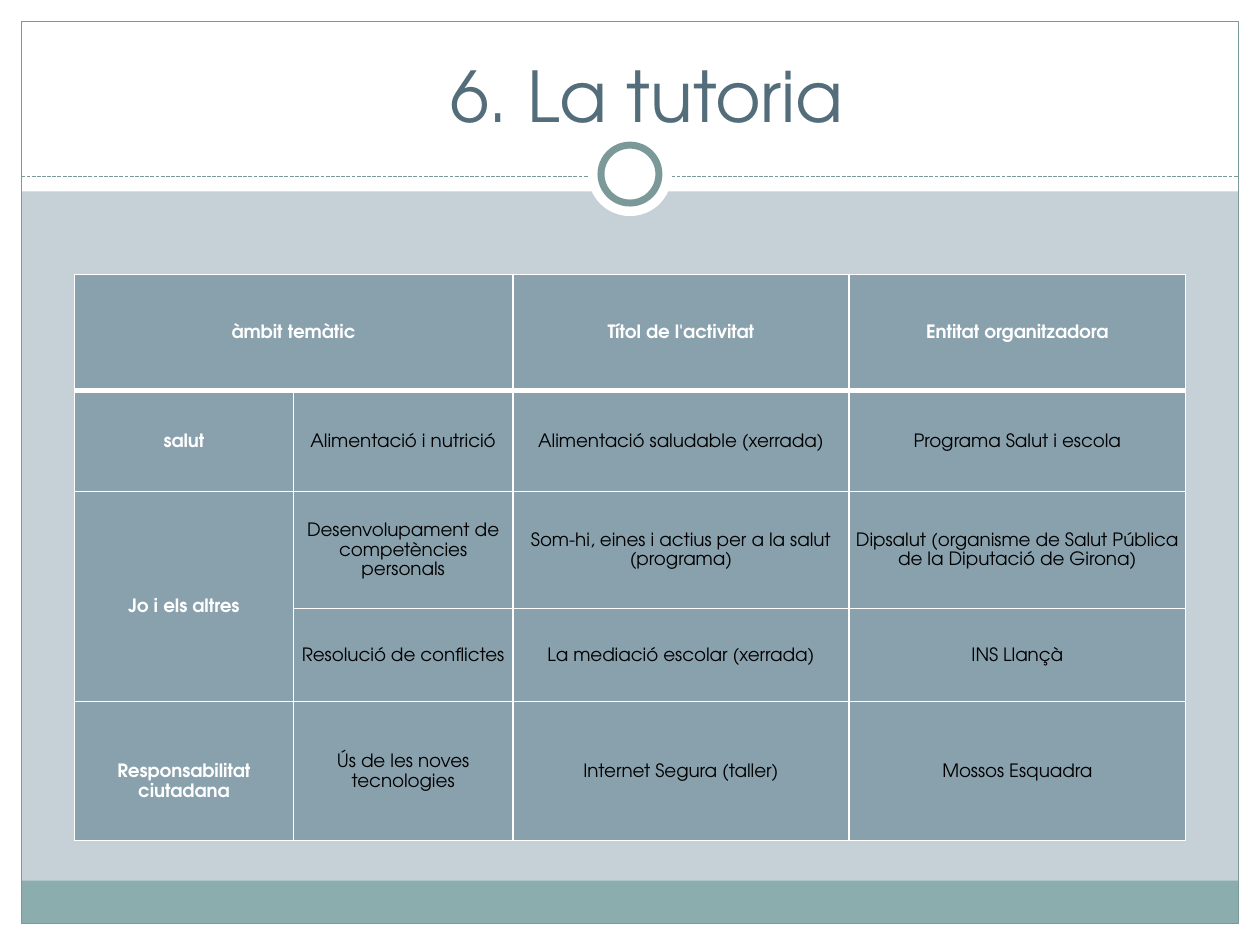
"""Build the tutoring slide with its table of activities."""
from lxml.etree import SubElement
from pptx import Presentation
from pptx.dml.color import RGBColor
from pptx.enum.dml import MSO_LINE
from pptx.enum.shapes import MSO_CONNECTOR, MSO_SHAPE
from pptx.enum.text import MSO_ANCHOR, PP_ALIGN
from pptx.oxml.ns import qn
from pptx.util import Pt

FONT = "TeX Gyre Adventor"
WIDE, HIGH, EDGE = 720, 540, 12.24
LINE = 11.5
HUES = {
    "back": "C5D1D7", "white": "FFFFFF", "band": "8CADAE", "rim": "7C999A",
    "title": "546D7A", "cell": "88A1AD", "black": "000000",
}
COLS = [125.28, 125.28, 192.24, 192.24]
ROWS = [66.24, 57.6, 66.96, 53.28, 79.2]
CELLS = [
    ["àmbit temàtic", "", "Títol de l'activitat", "Entitat organitzadora"],
    ["salut", "Alimentació i nutrició", "Alimentació saludable (xerrada)",
     "Programa Salut i escola"],
    ["Jo i els altres", "Desenvolupament de competències personals",
     "Som-hi, eines i actius per a la salut (programa)",
     "Dipsalut (organisme de Salut Pública de la Diputació de Girona)"],
    ["", "Resolució de conflictes", "La mediació escolar (xerrada)", "INS Llançà"],
    ["Responsabilitat ciutadana", "Ús de les noves tecnologies",
     "Internet Segura (taller)", "Mossos Esquadra"],
]
LOW = {(2, 0), (4, 0)}


def tint(name):
    return RGBColor.from_string(HUES[name])


def add_form(slide, kind, box, fill=None, rim=0):
    form = slide.shapes.add_shape(kind, *map(Pt, box))
    form.shadow.inherit = False
    if fill:
        form.fill.solid()
        form.fill.fore_color.rgb = tint(fill)
    else:
        form.fill.background()
    if rim:
        form.line.color.rgb = tint("rim")
        form.line.width = Pt(rim)
    else:
        form.line.fill.background()


def add_rule(slide, y):
    rule = slide.shapes.add_connector(
        MSO_CONNECTOR.STRAIGHT, Pt(EDGE), Pt(y), Pt(WIDE - EDGE), Pt(y))
    rule.line.color.rgb = tint("rim")
    rule.line.width = Pt(0.75)
    rule.line.dash_style = MSO_LINE.SQUARE_DOT
    SubElement(rule.element.spPr, qn("a:effectLst"))


def add_frame(slide):
    inner = WIDE - 2 * EDGE
    for box, fill in [
        ((0, 527.76, WIDE, EDGE), "white"),
        ((0, 0, WIDE, 109.44), "white"),
        ((0, 0, EDGE, HIGH), "white"),
        ((WIDE - EDGE, 0, EDGE, HIGH), "white"),
        ((EDGE, 503.28, inner, 24.48), "band"),
    ]:
        add_form(slide, MSO_SHAPE.RECTANGLE, box, fill)
    add_form(slide, MSO_SHAPE.RECTANGLE, (EDGE, EDGE, inner, HIGH - 2 * EDGE), rim=0.75)
    add_rule(slide, 100.8)
    for size, rim in [(48, 0), (33.12, 4)]:
        box = (WIDE - size) / 2, 99.5 - size / 2, size, size
        add_form(slide, MSO_SHAPE.OVAL, box, "white", rim)


def style(para, size, hue, bold=False):
    para.alignment = PP_ALIGN.CENTER
    font = para.font
    font.name, font.size, font.bold = FONT, Pt(size), bold
    font.color.rgb = tint(hue)


def set_title(slide, text):
    title = slide.shapes.title
    title.left, title.top, title.width, title.height = map(Pt, (48.24, 20.88, 642.96, 60.48))
    frame = title.text_frame
    frame.text = text
    frame.vertical_anchor = MSO_ANCHOR.BOTTOM
    style(frame.paragraphs[0], 40, "title")
    title.element.getparent().append(title.element)


def set_edges(cell, row):
    props = cell._tc.get_or_add_tcPr()
    thick = {"lnT": 3 if row == 1 else 1, "lnB": 3 if row == 0 else 1}
    for spot, side in enumerate(("lnL", "lnR", "lnT", "lnB")):
        edge = props.makeelement(qn(f"a:{side}"), {"w": str(Pt(thick.get(side, 1)))})
        fill = SubElement(edge, qn("a:solidFill"))
        SubElement(fill, qn("a:srgbClr"), val=HUES["white"])
        props.insert(spot, edge)


def set_cell(cell, text, row, col):
    cell.fill.solid()
    cell.fill.fore_color.rgb = tint("cell")
    cell.vertical_anchor = MSO_ANCHOR.MIDDLE
    cell.margin_left = cell.margin_right = Pt(2.88)
    cell.margin_top = Pt(LINE if (row, col) in LOW else 0)
    cell.margin_bottom = 0
    cell.text = text
    para = cell.text_frame.paragraphs[0]
    para.line_spacing = 1.15
    head = row == 0 or col == 0
    style(para, 10.5, "white" if head else "black", head)
    set_edges(cell, row)


def add_grid(slide):
    box = 42.48, 156.96, sum(COLS), sum(ROWS)
    grid = slide.shapes.add_table(len(ROWS), len(COLS), *map(Pt, box)).table
    grid.horz_banding = False
    for col, width in zip(grid.columns, COLS):
        col.width = Pt(width)
    for row, height in zip(grid.rows, ROWS):
        row.height = Pt(height)
    for r, texts in enumerate(CELLS):
        for c, text in enumerate(texts):
            set_cell(grid.cell(r, c), text, r, c)
    grid.cell(0, 0).merge(grid.cell(0, 1))
    grid.cell(2, 0).merge(grid.cell(3, 0))


def main():
    deck = Presentation()
    deck.slide_width, deck.slide_height = Pt(WIDE), Pt(HIGH)
    slide = deck.slides.add_slide(deck.slide_layouts[5])
    slide.background.fill.solid()
    slide.background.fill.fore_color.rgb = tint("back")
    add_frame(slide)
    set_title(slide, "6. La tutoria")
    add_grid(slide)
    deck.save("out.pptx")


if __name__ == "__main__":
    main()
